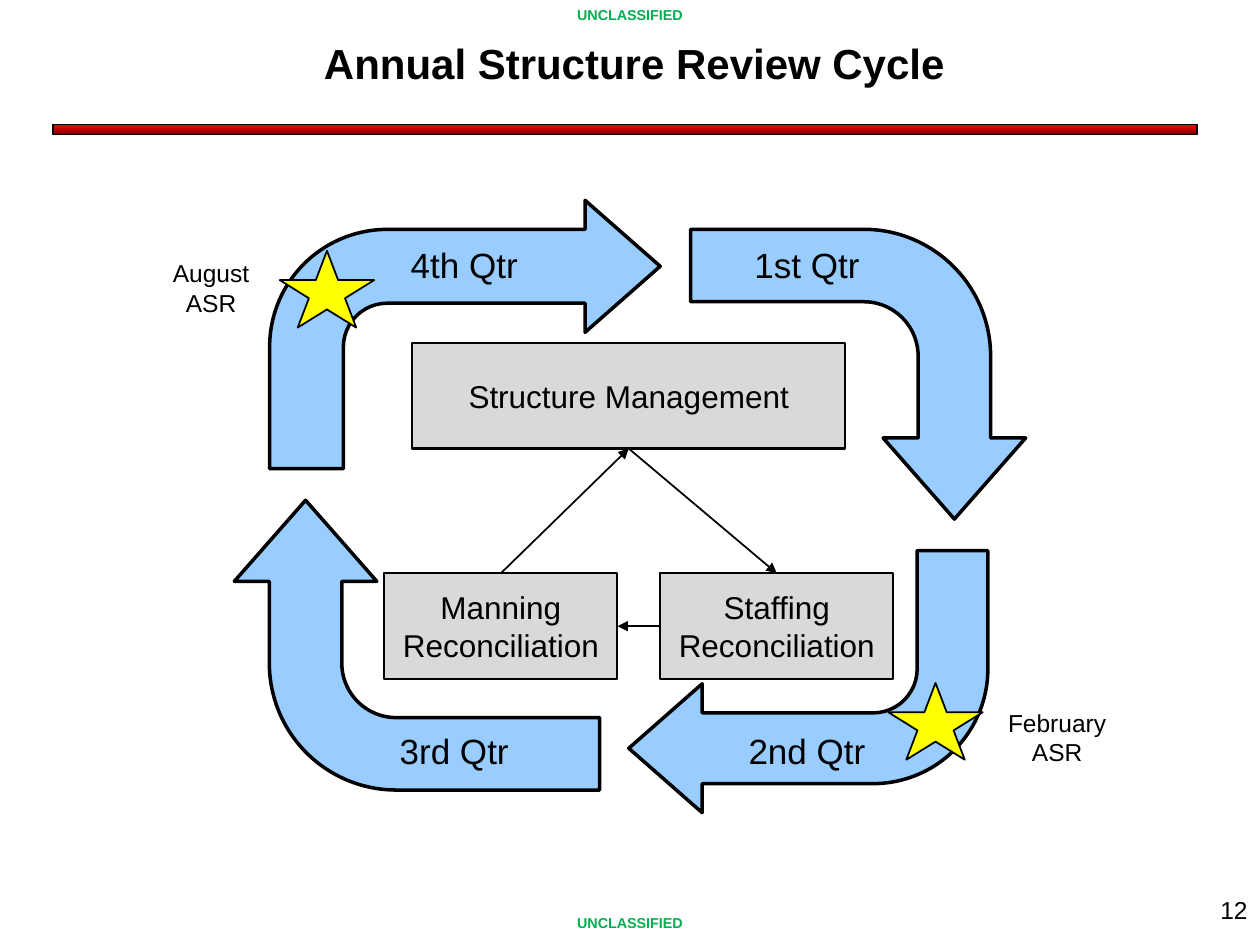
from lxml import etree
from pptx import Presentation
from pptx.dml.color import RGBColor
from pptx.enum.shapes import MSO_CONNECTOR, MSO_SHAPE
from pptx.enum.text import MSO_ANCHOR, MSO_AUTO_SIZE, PP_ALIGN
from pptx.oxml.ns import qn
from pptx.util import Inches, Pt

RECT, STAR, BENT = MSO_SHAPE.RECTANGLE, MSO_SHAPE.STAR_5_POINT, MSO_SHAPE.BENT_ARROW
STRAIGHT = MSO_CONNECTOR.STRAIGHT
TOP, MIDDLE = MSO_ANCHOR.TOP, MSO_ANCHOR.MIDDLE
CENTER, RIGHT = PP_ALIGN.CENTER, PP_ALIGN.RIGHT
NO_FIT = MSO_AUTO_SIZE.NONE
TITLE_ONLY = 5
SITE_TOP, SITE_LEFT, SITE_BOTTOM, SITE_RIGHT = range(4)

WIDTH, HEIGHT = Inches(10), Inches(7.5)
COLUMNS, ROWS = 100, 75
COLORS = {
    "black": "000000",
    "marking": "00B050",
    "cycle": "99CCFF",
    "step": "D9D9D9",
    "star": "FFFF00",
    "rule_top": "FF0000",
    "rule_bottom": "760000",
}


def rgb(name):
    return RGBColor.from_string(COLORS[name])


def write(frame, text, size=14, color="black", bold=False, align=CENTER, anchor=TOP):
    frame.word_wrap = True
    frame.auto_size = NO_FIT
    frame.vertical_anchor = anchor
    paragraph = frame.paragraphs[0]
    paragraph.text = text
    paragraph.alignment = align
    font = paragraph.runs[0].font
    font.name, font.size, font.bold = "Arial", Pt(size), bold
    font.color.rgb = rgb(color)


class Board:
    """Draws on one slide; places are (column, row, columns, rows) of the grid."""

    def __init__(self, slide):
        self.slide = slide
        self.shapes = slide.shapes

    def place(self, column, row, columns, rows):
        cell_width, cell_height = WIDTH / COLUMNS, HEIGHT / ROWS
        return (int(column * cell_width), int(row * cell_height),
                int(columns * cell_width), int(rows * cell_height))

    def title(self, place, text, **style):
        heading = self.shapes.title
        heading.left, heading.top, heading.width, heading.height = self.place(*place)
        write(heading.text_frame, text, anchor=MIDDLE, **style)

    def label(self, place, text, **style):
        box = self.shapes.add_textbox(*self.place(*place))
        write(box.text_frame, text, **style)

    def shape(self, kind, place, fill, line_width):
        item = self.shapes.add_shape(kind, *self.place(*place))
        item.shadow.inherit = False
        item.fill.solid()
        item.fill.fore_color.rgb = rgb(fill)
        item.line.color.rgb = rgb("black")
        item.line.width = Pt(line_width)
        return item

    def rule(self, place):
        bar = self.shape(RECT, place, "rule_top", 0.75)
        bar.fill.gradient()
        bar.fill.gradient_angle = 270
        for stop, color in zip(bar.fill.gradient_stops, ("rule_top", "rule_bottom")):
            stop.color.rgb = rgb(color)

    def cycle_arrow(self, place, turn, thickness):
        arrow = self.shape(BENT, place, "cycle", 2)
        arrow.rotation = turn
        for index, value in enumerate((thickness, 0.246, 0.28, 0.438)):
            arrow.adjustments[index] = value

    def step(self, place, text):
        box = self.shape(RECT, place, "step", 1.25)
        write(box.text_frame, text, size=18, anchor=MIDDLE)
        return box

    def link(self, start, start_site, end, end_site):
        arrow = self.shapes.add_connector(STRAIGHT, 0, 0, 0, 0)
        arrow.begin_connect(start, start_site)
        arrow.end_connect(end, end_site)
        arrow.line.color.rgb = rgb("black")
        arrow.line.width = Pt(1)
        line = arrow.line._get_or_add_ln()
        etree.SubElement(line, qn("a:tailEnd"), type="triangle")
        etree.SubElement(arrow._element.spPr, qn("a:effectLst"))


def main():
    deck = Presentation()
    deck.slide_width, deck.slide_height = WIDTH, HEIGHT
    board = Board(deck.slides.add_slide(deck.slide_layouts[TITLE_ONLY]))

    board.rule((4.2, 9.9, 90.8, 0.8))
    for row in (72.1, 0):
        board.label((20, row, 60, 2.4), "UNCLASSIFIED",
                    size=8.2, color="marking", bold=True)
    board.title((9.1, 0, 82.5, 9.9), "Annual Structure Review Cycle",
                size=24, bold=True)
    board.label((84.2, 70.5, 15.8, 4.5), "12", align=RIGHT)

    quarters = (
        ("4th Qtr", (29.7, 18.8), (21.4, 15.9, 31, 21.3), 0, 0.275),
        ("1st Qtr", (56.9, 18.8), (56.6, 16.4, 23, 26.6), 90, 0.25),
        ("2nd Qtr", (56.9, 57.4), (49.9, 43.7, 28.5, 20.8), 180, 0.27),
        ("3rd Qtr", (28.9, 57.4), (21.6, 36.7, 23, 29), 270, 0.25),
    )
    for _, _, place, turn, thickness in quarters:
        board.cycle_arrow(place, turn, thickness)
    for quarter, corner, *_ in quarters:
        board.label((*corner, 14.3, 4.4), quarter, size=20, anchor=MIDDLE)

    reviews = (
        ("August ASR", (11.5, 20, 10.5, 5.7), (22.2, 19.9)),
        ("February ASR", (78, 55.7, 11.8, 5.7), (70.5, 54.2)),
    )
    for review, place, star_corner in reviews:
        board.shape(STAR, (*star_corner, 7.5, 6.1), "star", 1)
        board.label(place, review)

    structure = board.step((32.7, 27.2, 34.4, 8.4), "Structure Management")
    manning, staffing = (
        board.step((column, 45.5, 18.5, 8.4), f"{name} Reconciliation")
        for column, name in ((30.5, "Manning"), (52.4, "Staffing"))
    )
    board.link(structure, SITE_BOTTOM, staffing, SITE_TOP)
    board.link(staffing, SITE_LEFT, manning, SITE_RIGHT)
    board.link(manning, SITE_TOP, structure, SITE_BOTTOM)

    deck.save("out.pptx")


if __name__ == "__main__":
    main()
